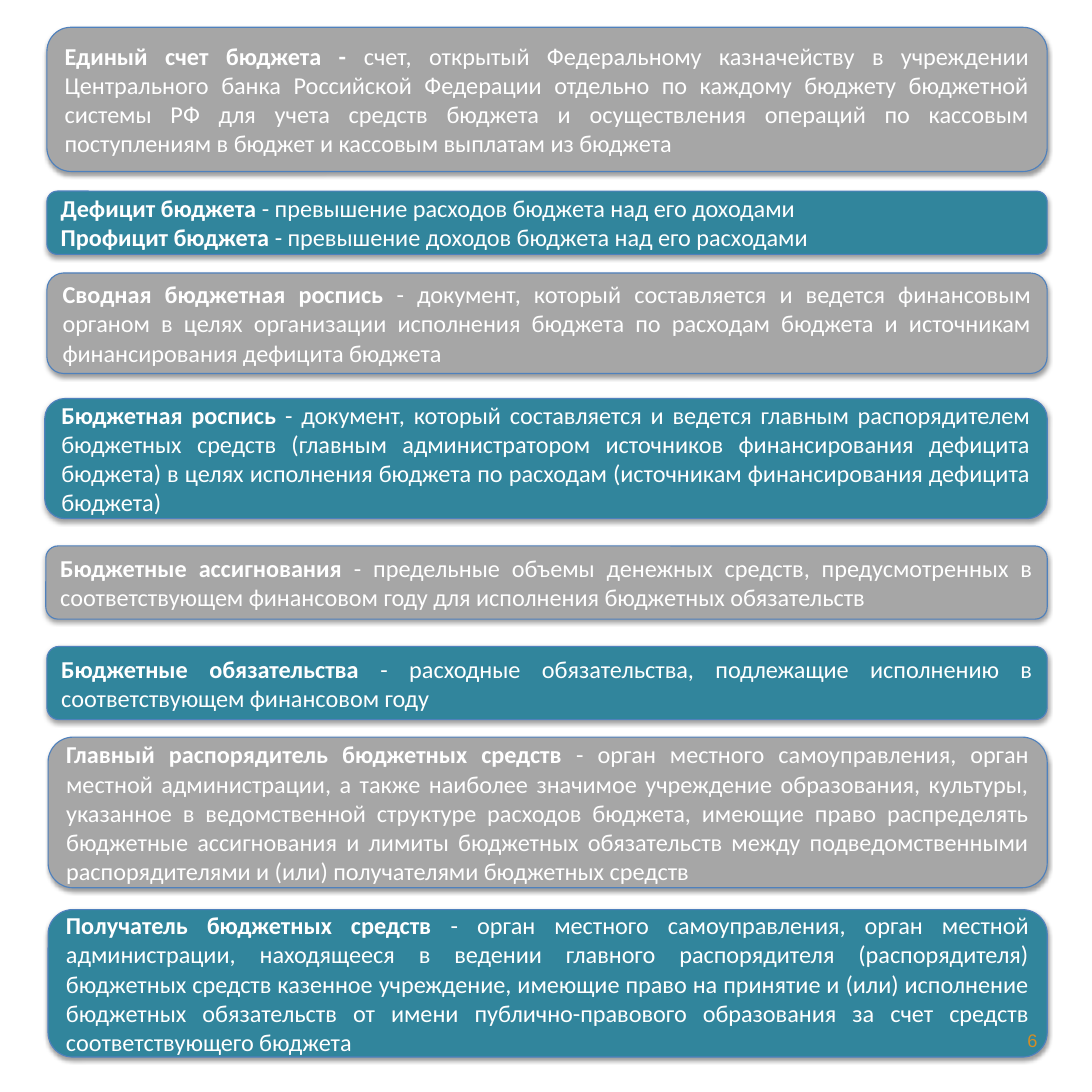
import lxml.etree
import pptx
import pptx.dml.color
import pptx.enum.shapes
import pptx.enum.text
import pptx.oxml.ns
import pptx.util

PX = 9144
GREY = pptx.dml.color.RGBColor(0xA6, 0xA6, 0xA6)
TEAL = pptx.dml.color.RGBColor(0x31, 0x85, 0x9C)
BLUE = pptx.dml.color.RGBColor(0x4F, 0x81, 0xBD)
WHITE = pptx.dml.color.RGBColor(0xFF, 0xFF, 0xFF)
OCHRE = pptx.dml.color.RGBColor(0xD2, 0x8E, 0x27)
BLACK = pptx.dml.color.RGBColor(0, 0, 0)

ALIGN = pptx.enum.text.PP_ALIGN
MIDDLE = pptx.enum.text.MSO_ANCHOR.MIDDLE
RIGHT_EDGE = 959

TERMS = [
    (43, 25, 132, ALIGN.JUSTIFY, [
        ("Единый счет бюджета - ",
         "счет, открытый Федеральному казначейству в учреждении Центрального банка Российской Федерации отдельно по каждому бюджету бюджетной системы РФ для учета средств бюджета и осуществления операций по кассовым поступлениям в бюджет и кассовым выплатам из бюджета")]),
    (43, 175, 58, ALIGN.LEFT, [
        ("Дефицит бюджета ", "- превышение расходов бюджета над его доходами"),
        ("Профицит бюджета ", "- превышение доходов бюджета над его расходами")]),
    (43, 250, 92, ALIGN.JUSTIFY, [
        ("Сводная бюджетная роспись ",
         "- документ, который составляется и ведется финансовым органом в целях организации исполнения бюджета по расходам бюджета и источникам финансирования дефицита бюджета")]),
    (41, 365, 110, ALIGN.JUSTIFY, [
        ("Бюджетная роспись ",
         "- документ, который составляется и ведется главным распорядителем бюджетных средств (главным администратором источников финансирования дефицита бюджета) в целях исполнения бюджета по расходам (источникам финансирования дефицита бюджета)")]),
    (42, 500, 67, ALIGN.JUSTIFY, [
        ("Бюджетные ассигнования ",
         "- предельные объемы денежных средств, предусмотренных в соответствующем финансовом году для исполнения бюджетных обязательств")]),
    (43, 592, 67, ALIGN.JUSTIFY, [
        ("Бюджетные обязательства ",
         "- расходные обязательства, подлежащие исполнению в соответствующем финансовом году")]),
    (44, 675, 138, ALIGN.JUSTIFY, [
        ("Главный распорядитель бюджетных средств ",
         "- орган местного самоуправления, орган местной администрации, а также наиболее значимое учреждение образования, культуры, указанное в ведомственной структуре расходов бюджета, имеющие право распределять бюджетные ассигнования и лимиты бюджетных обязательств между подведомственными распорядителями и (или) получателями бюджетных средств")]),
    (44, 833, 135, ALIGN.JUSTIFY, [
        ("Получатель бюджетных средств ",
         "- орган местного самоуправления, орган местной администрации, находящееся в ведении главного распорядителя (распорядителя) бюджетных средств казенное учреждение, имеющие право на принятие и (или) исполнение бюджетных обязательств от имени публично-правового образования за счет средств соответствующего бюджета")]),
]


def apply_format(target, values):
    for name, value in values.items():
        setattr(target, name, value)


class Glossary:
    frame_format = {"word_wrap": True, "vertical_anchor": MIDDLE}
    term_format = {"name": "Calibri", "size": pptx.util.Pt(16)}
    number_format = {"name": "Arial", "size": pptx.util.Pt(12), "bold": False}
    no_margins = {f"margin_{side}": 0 for side in ("left", "top", "right", "bottom")}

    def __init__(self, page):
        self.page = page

    def span(self, para, text, color, values):
        span = para.add_run()
        span.text = text
        apply_format(span.font, values)
        span.font.color.rgb = color

    def shadow(self, box):
        box.shadow.inherit = False
        effects = box._element.spPr.find(pptx.oxml.ns.qn("a:effectLst"))
        outer = lxml.etree.SubElement(
            effects, pptx.oxml.ns.qn("a:outerShdw"),
            blurRad=str(pptx.util.Pt(3.1)), dist=str(pptx.util.Pt(1.6)),
            dir="5400000", rotWithShape="0")
        color = lxml.etree.SubElement(outer, pptx.oxml.ns.qn("a:srgbClr"), val=str(BLACK))
        lxml.etree.SubElement(color, pptx.oxml.ns.qn("a:alpha"), val="38000")

    def term(self, left, top, height, fill, align, entries):
        box = self.page.shapes.add_shape(
            pptx.enum.shapes.MSO_SHAPE.ROUNDED_RECTANGLE,
            left * PX, top * PX, (RIGHT_EDGE - left) * PX, height * PX)
        box.fill.solid()
        box.fill.fore_color.rgb = fill
        box.line.color.rgb = BLUE
        box.line.width = pptx.util.Pt(0.75)
        self.shadow(box)
        frame = box.text_frame
        apply_format(frame, self.frame_format)
        for index, (title, meaning) in enumerate(entries):
            para = frame.add_paragraph() if index else frame.paragraphs[0]
            para.alignment = align
            self.span(para, title, WHITE, {**self.term_format, "bold": True})
            self.span(para, meaning, WHITE, {**self.term_format, "bold": False})

    def page_number(self, left, top, width, height, text):
        box = self.page.shapes.add_textbox(left * PX, top * PX, width * PX, height * PX)
        frame = box.text_frame
        apply_format(frame, {**self.frame_format, **self.no_margins})
        para = frame.paragraphs[0]
        para.alignment = ALIGN.RIGHT
        self.span(para, text, OCHRE, self.number_format)


def main():
    deck = pptx.Presentation()
    apply_format(deck, {"slide_width": 1000 * PX, "slide_height": 1000 * PX})
    glossary = Glossary(deck.slides.add_slide(deck.slide_layouts[6]))
    for index, (left, top, height, align, entries) in enumerate(TERMS):
        fill = TEAL if index % 2 else GREY
        glossary.term(left, top, height, fill, align, entries)
    glossary.page_number(717, 943, 233, 20, "6")
    deck.save("out.pptx")


if __name__ == "__main__":
    main()
